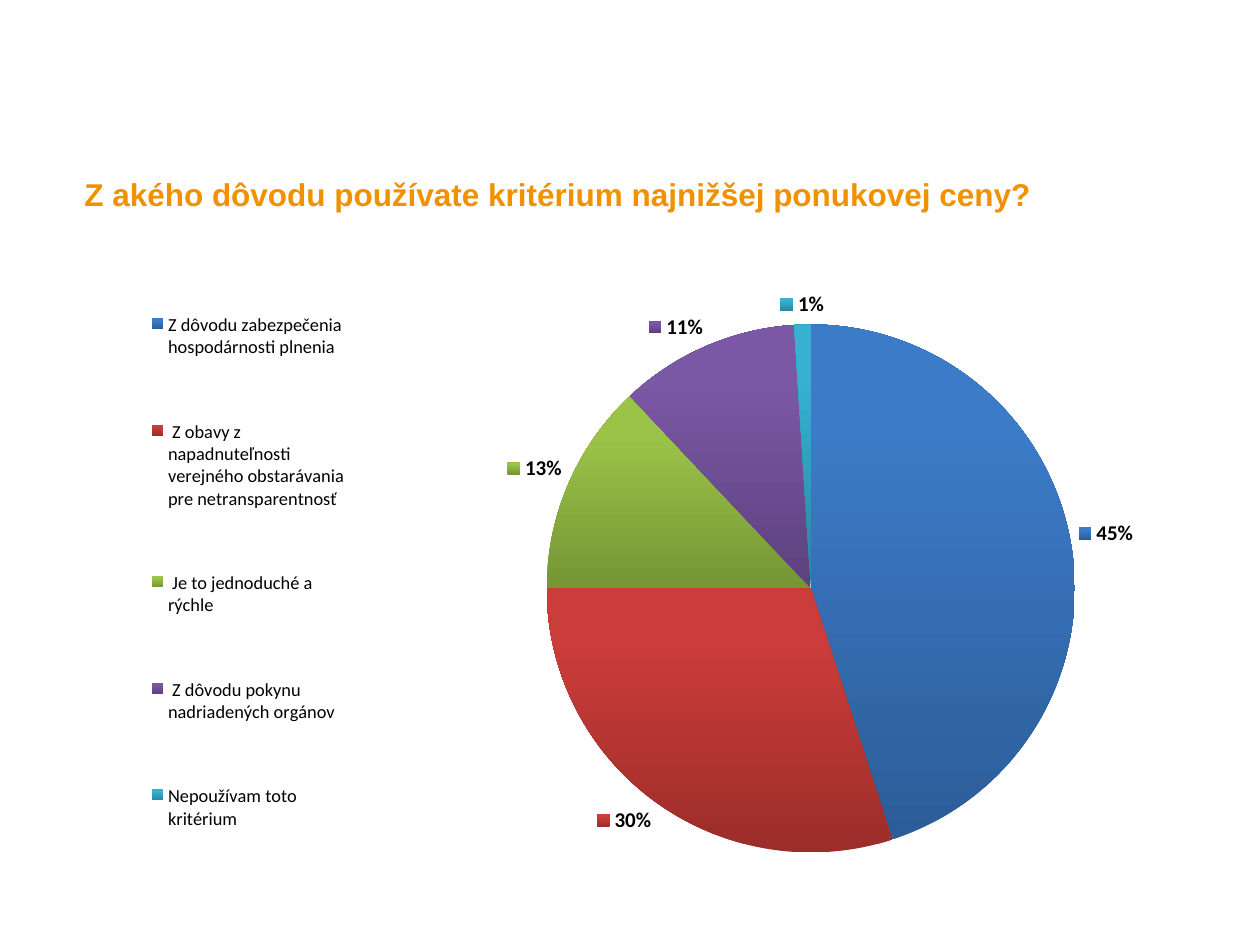
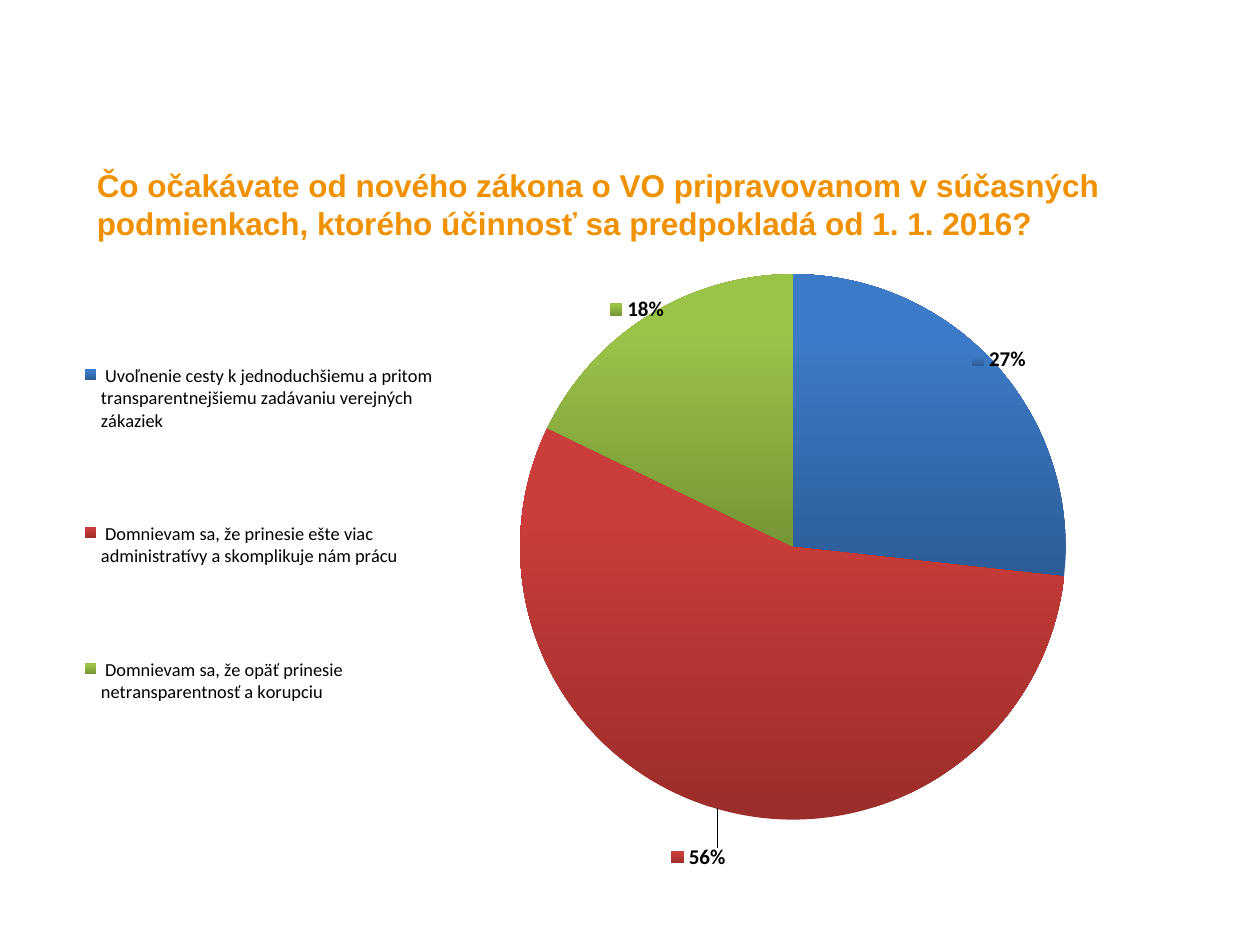
from typing import NamedTuple

from lxml import etree
from pptx import Presentation
from pptx.chart.data import CategoryChartData
from pptx.dml.color import RGBColor
from pptx.enum.chart import XL_CHART_TYPE, XL_LABEL_POSITION, XL_LEGEND_POSITION
from pptx.enum.text import MSO_ANCHOR
from pptx.oxml.ns import qn
from pptx.util import Inches, Pt

PIE = XL_CHART_TYPE.PIE
OUTSIDE_END = XL_LABEL_POSITION.OUTSIDE_END
LEGEND_LEFT = XL_LEGEND_POSITION.LEFT
TOP = MSO_ANCHOR.TOP
MIDDLE = MSO_ANCHOR.MIDDLE

TITLE_FONT = "Arial"
CHART_FONT = "Calibri"
ORANGE = "F09100"
BLACK = "000000"
PERCENT_FORMAT = '0"%"'
SLICE_GRADIENTS = [
    ("2C5D98", "3C7BC7"),
    ("9B2D2A", "CB3D3A"),
    ("769535", "9BC348"),
    ("5D417E", "7B58A6"),
    ("2787A0", "36B1D2"),
]


class Area(NamedTuple):
    left: float
    top: float
    width: float
    height: float


class Offset(NamedTuple):
    x: float
    y: float


class Answer(NamedTuple):
    text: str
    percent: int
    label_offset: Offset | None = None


class Question(NamedTuple):
    title: str
    title_area: Area
    title_anchor: MSO_ANCHOR
    title_inset: Offset
    chart_area: Area
    legend_area: Area
    pie_area: Area
    answers: list[Answer]


QUESTIONS = [
    Question(
        title="Z akého dôvodu používate kritérium najnižšej ponukovej ceny?",
        title_area=Area(0.67, 1.39, 8.86, 0.3),
        title_anchor=TOP,
        title_inset=Offset(0, 0),
        chart_area=Area(1.06, 1.56, 8.27, 6.35),
        legend_area=Area(0.01, 0.07, 0.2, 0.8),
        pie_area=Area(0.35, 0.16, 0.6, 0.66),
        answers=[
            Answer("Z dôvodu zabezpečenia hospodárnosti plnenia", 45),
            Answer(" Z obavy z napadnuteľnosti verejného obstarávania pre netransparentnosť", 30),
            Answer(" Je to jednoduché a rýchle", 13),
            Answer(" Z dôvodu pokynu nadriadených orgánov", 11),
            Answer("Nepoužívam toto kritérium", 1),
        ],
    ),
    Question(
        title="Čo očakávate od nového zákona o VO pripravovanom v súčasných "
        "podmienkach, ktorého účinnosť sa predpokladá od 1. 1. 2016?",
        title_area=Area(0.67, 0.99, 9, 1.25),
        title_anchor=MIDDLE,
        title_inset=Offset(0.1, 0.05),
        chart_area=Area(0.67, 1.98, 7.92, 4.92),
        legend_area=Area(0, 0.04, 0.35, 0.84),
        pie_area=Area(0.43, 0.04, 0.56, 0.88),
        answers=[
            Answer(
                " Uvoľnenie cesty k jednoduchšiemu a pritom transparentnejšiemu "
                "zadávaniu verejných zákaziek",
                27,
                Offset(-0.03, 0.02),
            ),
            Answer(
                " Domnievam sa, že prinesie ešte viac administratívy a skomplikuje nám prácu",
                56,
                Offset(0.01, 0.05),
            ),
            Answer(
                " Domnievam sa, že opäť prinesie netransparentnosť a korupciu",
                18,
                Offset(0.02, 0.02),
            ),
        ],
    ),
]


def rgb(color: str) -> RGBColor:
    return RGBColor.from_string(color)


def style_font(font, *, name: str, size: float, color: str, bold: bool = False) -> None:
    font.name = name
    font.size = Pt(size)
    font.bold = bold
    font.color.rgb = rgb(color)


def to_inches(area: Area) -> list[Inches]:
    return [Inches(length) for length in area]


def add_text(
    page, text: str, *, area: Area, anchor: MSO_ANCHOR, inset: Offset,
    font: str, size: float, color: str, bold: bool,
) -> None:
    frame = page.shapes.add_textbox(*to_inches(area)).text_frame
    frame.word_wrap = True
    frame.vertical_anchor = anchor
    frame.margin_left = frame.margin_right = Inches(inset.x)
    frame.margin_top = frame.margin_bottom = Inches(inset.y)
    span = frame.paragraphs[0].add_run()
    span.text = text
    style_font(span.font, name=font, size=size, color=color, bold=bold)


def chart_layout(settings: dict[str, str | float]):
    layout = etree.Element(qn("c:layout"))
    manual = etree.SubElement(layout, qn("c:manualLayout"))
    for name, value in settings.items():
        etree.SubElement(manual, qn(f"c:{name}")).set("val", str(value))
    return layout


def area_layout(area: Area, inner: bool = False):
    target = {"layoutTarget": "inner"} if inner else {}
    modes = {"xMode": "edge", "yMode": "edge"}
    return chart_layout(target | modes | dict(zip("xywh", area)))


def place_chart_parts(chart, question: Question) -> None:
    plot_area = chart.element.find(".//" + qn("c:plotArea"))
    legend_position = chart.element.find(".//" + qn("c:legendPos"))
    for parent in (plot_area, legend_position.getparent()):
        for old_layout in parent.findall(qn("c:layout")):
            parent.remove(old_layout)
    plot_area.insert(0, area_layout(question.pie_area, inner=True))
    legend_position.addnext(area_layout(question.legend_area))


def move_label(chart, index: int, offset: Offset) -> None:
    label = chart.plots[0].series[0].points[index].data_label
    style_font(label.font, name=CHART_FONT, size=12, color=BLACK, bold=True)
    label.position = OUTSIDE_END
    for element in chart.element.iter(qn("c:dLbl")):
        marker = element.find(qn("c:idx"))
        if marker.get("val") == str(index):
            number_format = etree.Element(qn("c:numFmt"))
            number_format.set("formatCode", PERCENT_FORMAT)
            number_format.set("sourceLinked", "0")
            marker.addnext(number_format)
            marker.addnext(chart_layout(offset._asdict()))
            element.find(qn("c:showLegendKey")).set("val", "1")


def style_slices(chart, answers: list[Answer]) -> None:
    series = chart.plots[0].series[0]
    labels = series.data_labels
    style_font(labels.font, name=CHART_FONT, size=12, color=BLACK, bold=True)
    labels.number_format = PERCENT_FORMAT
    labels.number_format_is_linked = False
    labels.position = OUTSIDE_END
    labels.show_value = True
    labels.show_legend_key = True
    for index, (answer, colors) in enumerate(zip(answers, SLICE_GRADIENTS)):
        fill = series.points[index].format.fill
        fill.gradient()
        fill.gradient_angle = 90
        for stop, color, position in zip(fill.gradient_stops, colors, (0, 0.8)):
            stop.color.rgb = rgb(color)
            stop.position = position
        if answer.label_offset:
            move_label(chart, index, answer.label_offset)


def add_pie(page, question: Question) -> None:
    data = CategoryChartData()
    data.categories = [answer.text for answer in question.answers]
    data.add_series("Series 1", [answer.percent for answer in question.answers])
    chart = page.shapes.add_chart(PIE, *to_inches(question.chart_area), data).chart
    chart.has_title = False
    style_font(chart.font, name=CHART_FONT, size=10, color=BLACK)
    chart.has_legend = True
    chart.legend.position = LEGEND_LEFT
    chart.legend.include_in_layout = False
    style_font(chart.legend.font, name=CHART_FONT, size=10.5, color=BLACK)
    chart.plots[0].vary_by_categories = True
    style_slices(chart, question.answers)
    place_chart_parts(chart, question)


def add_question(deck, question: Question) -> None:
    page = deck.slides.add_slide(deck.slide_layouts[6])
    add_text(
        page, question.title, area=question.title_area, anchor=question.title_anchor,
        inset=question.title_inset, font=TITLE_FONT, size=18, color=ORANGE, bold=True,
    )
    add_pie(page, question)


def main() -> None:
    deck = Presentation()
    deck.slide_width = Inches(10)
    deck.slide_height = Inches(7.5)
    for question in QUESTIONS:
        add_question(deck, question)
    deck.save("out.pptx")


if __name__ == "__main__":
    main()
